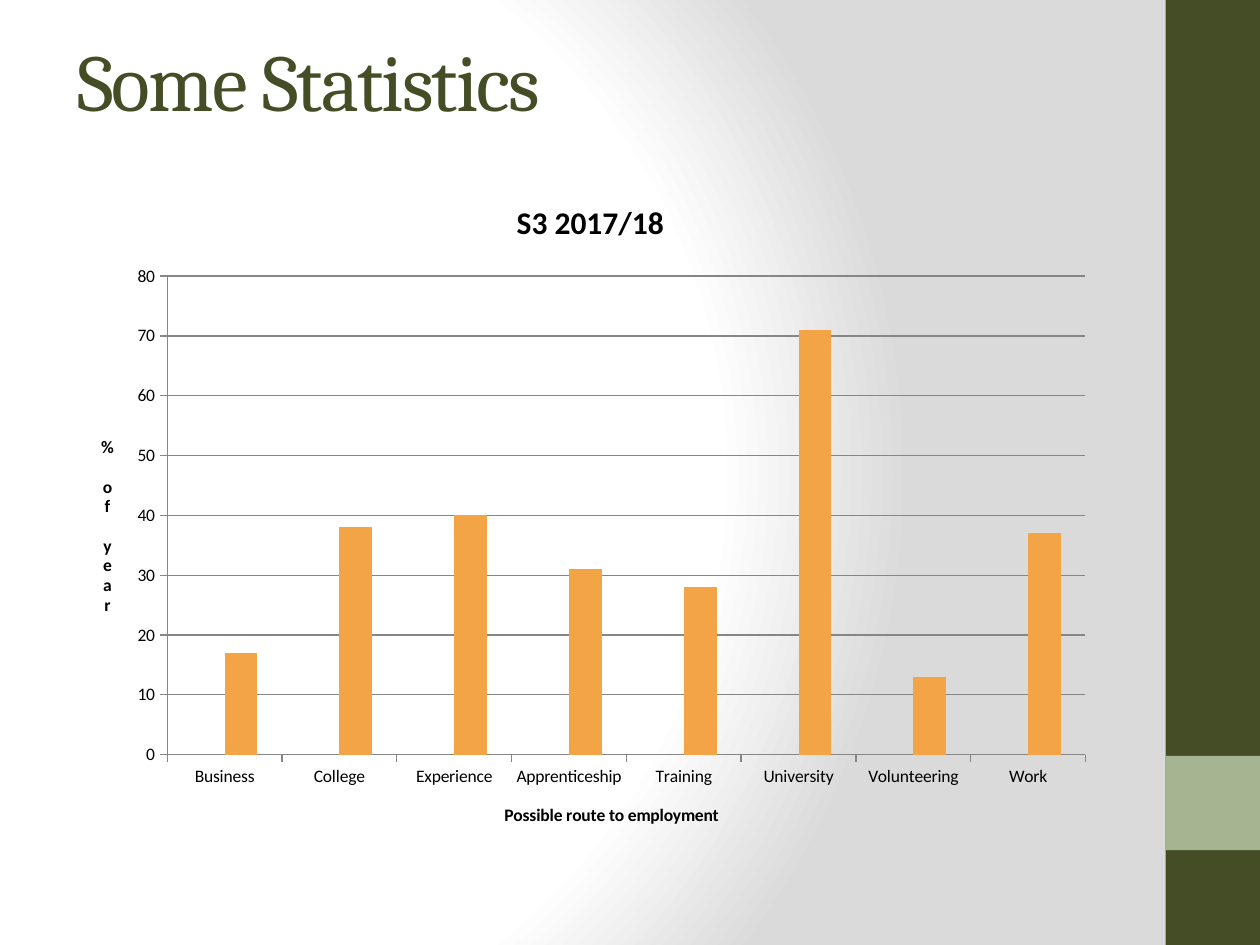
from dataclasses import dataclass

from pptx import Presentation
from pptx.chart.data import CategoryChartData
from pptx.dml.color import RGBColor
from pptx.enum.chart import XL_CHART_TYPE, XL_TICK_MARK
from pptx.enum.shapes import MSO_SHAPE
from pptx.enum.text import MSO_ANCHOR, PP_ALIGN
from pptx.oxml import parse_xml
from pptx.oxml.ns import nsdecls
from pptx.util import Cm, Pt

COLUMNS = XL_CHART_TYPE.COLUMN_CLUSTERED
TICK_OUTSIDE = XL_TICK_MARK.OUTSIDE
RECTANGLE = MSO_SHAPE.RECTANGLE
MIDDLE = MSO_ANCHOR.MIDDLE
LEFT = PP_ALIGN.LEFT
TITLE_ONLY = 5


@dataclass(frozen=True)
class Theme:
    dark: str = "444D26"
    sage: str = "A5B592"
    orange: str = "F3A447"
    black: str = "000000"
    grid: str = "868686"
    white: str = "FFFFFF"
    silver: str = "DADADA"
    heading_font: str = "Cambria"
    body_font: str = "Calibri"
    heading_size: int = 46
    chart_title_size: int = 18
    label_size: int = 10


theme = Theme()


def write(frame, text, *, font, size, color, bold=False, align=None, spacing=None):
    """Fill a text frame with one formatted run; spacing is in points."""
    para = frame.paragraphs[0]
    para.alignment = align
    span = para.add_run()
    span.text = text
    span.font.name = font
    span.font.size = Pt(size)
    span.font.bold = bold
    span.font.color.rgb = RGBColor.from_string(color)
    if spacing is not None:
        span.font._element.set("spc", str(spacing * 100))


deck = Presentation()
deck.slide_width = Cm(25.4)
deck.slide_height = Cm(19.05)
page = deck.slides.add_slide(deck.slide_layouts[TITLE_ONLY])

# Background: a circular gradient, white on the left to silver on the right
stops = [(0, theme.white), (75, theme.white), (100, theme.silver)]
stop_xml = "".join(
    f'<a:gs pos="{position * 1000}"><a:srgbClr val="{color}"/></a:gs>'
    for position, color in stops
)
background = parse_xml(
    f'<p:bg {nsdecls("p", "a")}><p:bgPr><a:gradFill rotWithShape="1">'
    f"<a:gsLst>{stop_xml}</a:gsLst>"
    '<a:path path="circle"><a:fillToRect l="20000" t="50000" r="100000" b="50000"/></a:path>'
    "</a:gradFill><a:effectLst/></p:bgPr></p:bg>"
)
page._element.cSld.insert(0, background)

# Side band with its accent block
for top, height, color in [(0, 19.05, theme.dark), (15.24, 1.9, theme.sage)]:
    band = page.shapes.add_shape(RECTANGLE, Cm(23.5), Cm(top), Cm(1.9), Cm(height))
    band.shadow.inherit = False
    band.fill.solid()
    band.fill.fore_color.rgb = RGBColor.from_string(color)
    band.line.fill.background()

# Title
title = page.shapes.title
title.left, title.top, title.width, title.height = Cm(1.3), Cm(0), Cm(21.16), Cm(3.18)
title.text_frame.vertical_anchor = MIDDLE
write(title.text_frame, "Some Statistics", font=theme.heading_font,
      size=theme.heading_size, color=theme.dark, align=LEFT, spacing=-1)

# Chart
routes = {
    "Business": 17, "College": 38, "Experience": 40, "Apprenticeship": 31,
    "Training": 28, "University": 71, "Volunteering": 13, "Work": 37,
}
data = CategoryChartData()
data.categories = list(routes)
data.add_series("Series 1", [None] * len(routes))
data.add_series("Series 2", list(routes.values()))
chart = page.shapes.add_chart(
    COLUMNS, Cm(1.5), Cm(3.53), Cm(20.8), Cm(13.59), data
).chart
chart.has_legend = False
chart.font.name = theme.body_font
chart.font.size = Pt(theme.label_size)
chart.font.color.rgb = RGBColor.from_string(theme.black)

plot = chart.plots[0]
plot.gap_width = 150
plot.overlap = 0
plot.vary_by_categories = False
for series, color in zip(plot.series, [theme.sage, theme.orange]):
    series.format.fill.solid()
    series.format.fill.fore_color.rgb = RGBColor.from_string(color)

route_axis, share_axis = chart.category_axis, chart.value_axis
share_axis.minimum_scale, share_axis.maximum_scale = 0, 80
share_axis.major_unit = 10
share_axis.has_major_gridlines = True
for axis in (route_axis, share_axis):
    axis.major_tick_mark = TICK_OUTSIDE
for lines in (route_axis, share_axis, share_axis.major_gridlines):
    lines.format.line.width = Pt(0.75)
    lines.format.line.color.rgb = RGBColor.from_string(theme.grid)

chart.has_title = True
chart.chart_title.include_in_layout = False
captions = [
    (chart.chart_title, "S3 2017/18", theme.chart_title_size),
    (route_axis.axis_title, "Possible route to employment", theme.label_size),
    (share_axis.axis_title, "% of year", theme.label_size),
]
for caption, text, size in captions:
    write(caption.text_frame, text, font=theme.body_font, size=size,
          color=theme.black, bold=True)

# Stack the letters of the value axis title
stacked = share_axis.axis_title.text_frame._txBody.bodyPr
stacked.set("rot", "0")
stacked.set("vert", "wordArtVert")

# Fix the inner plot area as fractions of the chart
plot_area = chart._chartSpace.chart.plotArea
for old_layout in plot_area.xpath("c:layout"):
    plot_area.remove(old_layout)
fractions = "".join(
    f'<c:{side} val="{value}"/>'
    for side, value in [("x", 0.09), ("y", 0.15), ("w", 0.89), ("h", 0.71)]
)
plot_area.insert(0, parse_xml(
    f'<c:layout {nsdecls("c")}><c:manualLayout><c:layoutTarget val="inner"/>'
    f'<c:xMode val="edge"/><c:yMode val="edge"/>{fractions}</c:manualLayout></c:layout>'
))

deck.save("out.pptx")
